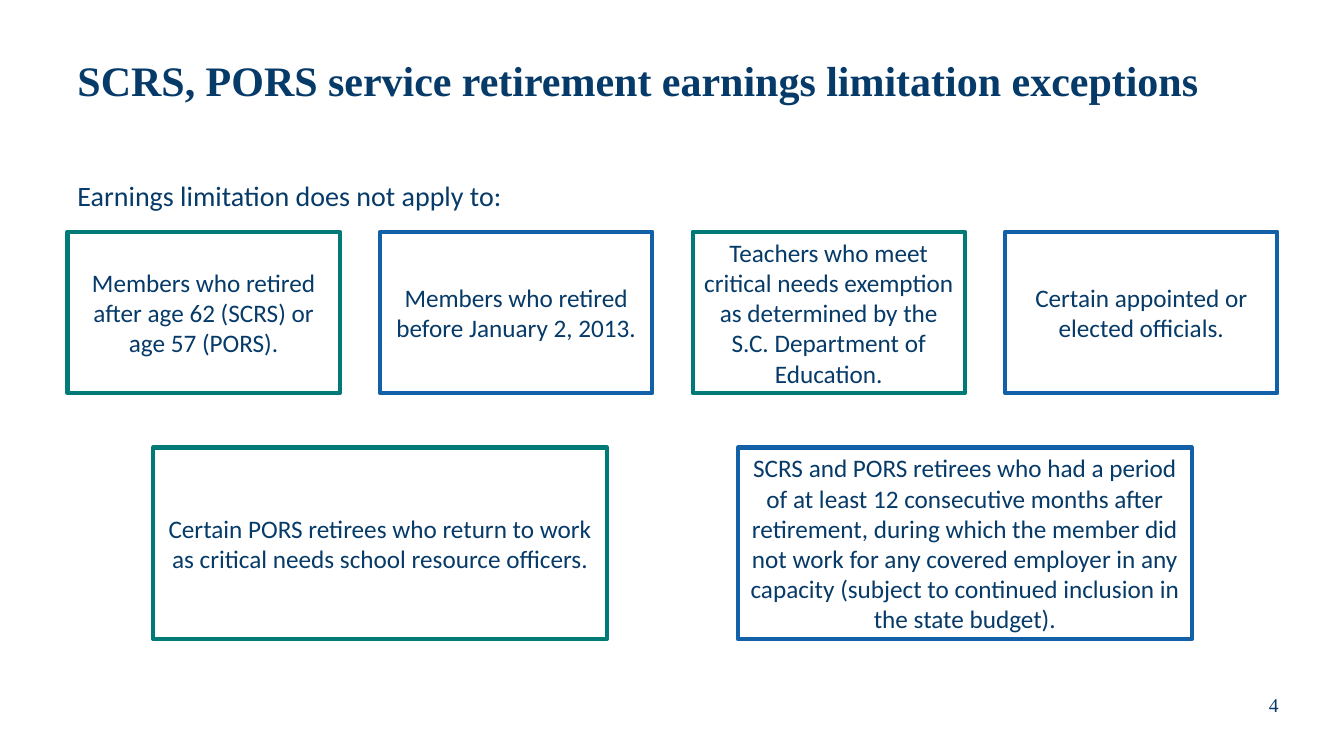
from pptx import Presentation
from pptx.dml.color import RGBColor
from pptx.enum.shapes import MSO_SHAPE
from pptx.enum.text import MSO_ANCHOR, PP_ALIGN
from pptx.util import Inches, Pt

NAVY = RGBColor(0x06, 0x3A, 0x68)
TEAL = RGBColor(0x00, 0x7A, 0x77)
BLUE = RGBColor(0x12, 0x60, 0xA7)
SERIF = "Times New Roman"
SANS = "Calibri"

deck = Presentation()
deck.slide_width = Inches(13.33)
deck.slide_height = Inches(7.5)
slide = deck.slides.add_slide(deck.slide_layouts[6])


def write(shape, text, face, size, align, anchor, bold=False, gap=1.0):
    frame = shape.text_frame
    frame.word_wrap = True
    frame.vertical_anchor = anchor
    para = frame.paragraphs[0]
    para.text = text
    para.alignment = align
    para.line_spacing = gap
    style = {"name": face, "size": Pt(size), "bold": bold}
    for key, value in style.items():
        setattr(para.font, key, value)
    para.font.color.rgb = NAVY


MID, TOP = MSO_ANCHOR.MIDDLE, MSO_ANCHOR.TOP
LEFT, CENTER = PP_ALIGN.LEFT, PP_ALIGN.CENTER

labels = [
    ((0.67, 0.25, 12, 1.15),
     ("SCRS, PORS service retirement earnings limitation exceptions",
      SERIF, 30, LEFT, MID, True, 0.9)),
    ((0.67, 1.76, 12, 0.5),
     ("Earnings limitation does not apply to:", SANS, 20, LEFT, TOP, False, 0.9)),
    ((12.05, 6.74, 1.17, 0.5), ("4", SERIF, 14, CENTER, MID)),
]
for place, words in labels:
    write(slide.shapes.add_textbox(*map(Inches, place)), *words)

rows = [
    (0.67, 2.3, 2.7, 1.6, 3.1, [
        "Members who retired after age 62 (SCRS) or age 57 (PORS).",
        "Members who retired before January 2, 2013.",
        "Teachers who meet critical needs exemption as determined by the "
        "S.C. Department of Education.",
        "Certain appointed or elected officials.",
    ]),
    (1.52, 4.44, 4.5, 1.9, 5.8, [
        "Certain PORS retirees who return to work as critical needs school "
        "resource officers.",
        "SCRS and PORS retirees who had a period of at least 12 consecutive "
        "months after retirement, during which the member did not work for any "
        "covered employer in any capacity (subject to continued inclusion in "
        "the state budget).",
    ]),
]
for left, top, width, height, step, texts in rows:
    for col, text in enumerate(texts):
        place = (left + col * step, top, width, height)
        box = slide.shapes.add_shape(MSO_SHAPE.RECTANGLE, *map(Inches, place))
        box.shadow.inherit = False
        box.fill.background()
        box.line.color.rgb = BLUE if col % 2 else TEAL
        box.line.width = Pt(3)
        for side in ("left", "top", "right", "bottom"):
            setattr(box.text_frame, f"margin_{side}", Inches(0.1))
        write(box, text, SANS, 18, CENTER, MID)

deck.save("out.pptx")
